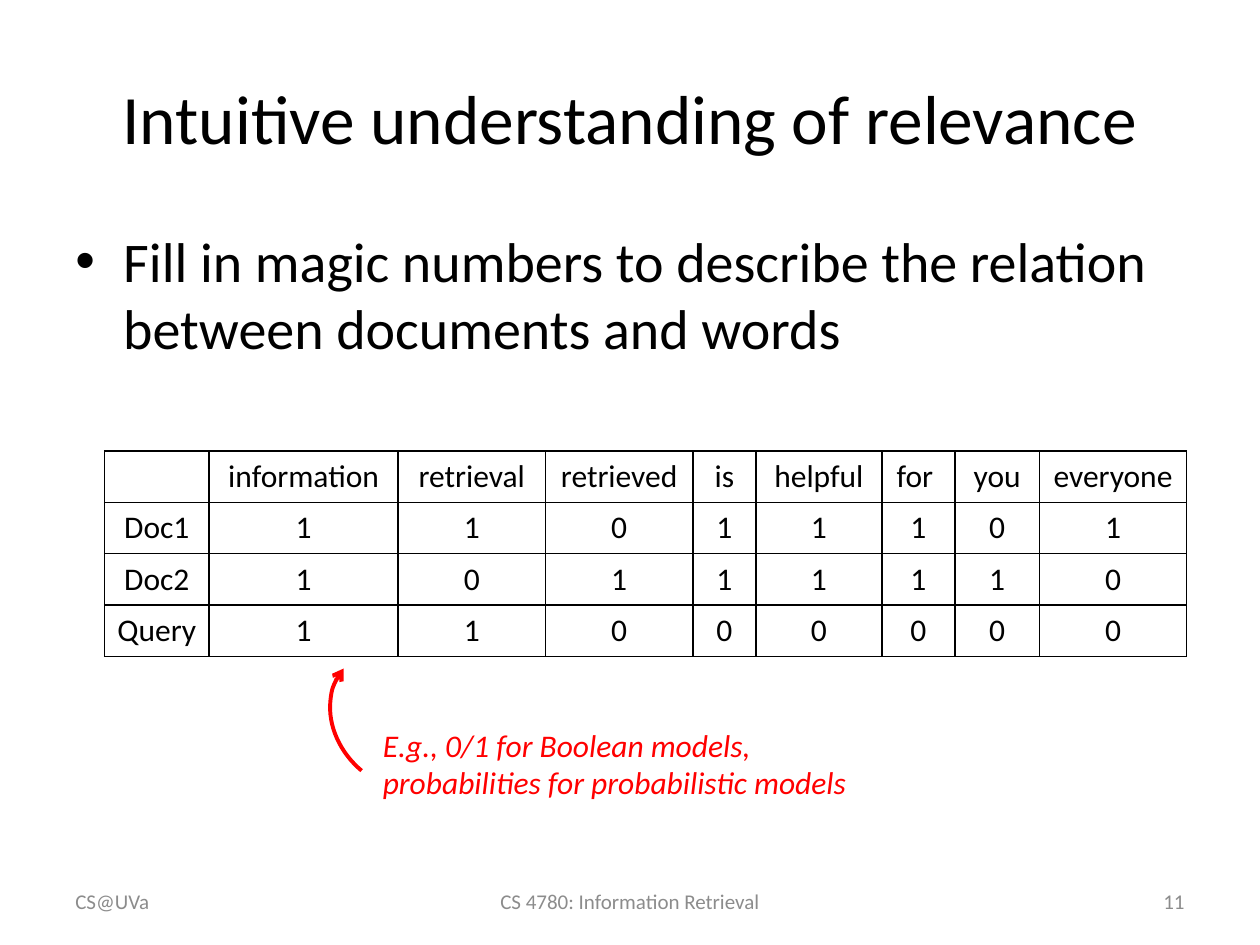
from dataclasses import dataclass

from lxml.etree import SubElement
from pptx import Presentation
from pptx.dml.color import RGBColor
from pptx.enum.shapes import MSO_SHAPE
from pptx.enum.text import MSO_ANCHOR, PP_ALIGN
from pptx.oxml.ns import qn
from pptx.util import Inches, Pt


@dataclass(frozen=True)
class Theme:
    font: str = "Calibri"
    ink: str = "000000"
    accent: str = "FF0000"
    muted: str = "8C8C8C"
    title: float = 39.6
    body: float = 32
    small: float = 18
    footer: float = 12
    border: float = 1
    arrow: float = 2.25


THEME = Theme()

WORDS = ["", "information", "retrieval", "retrieved", "is", "helpful",
         "for ", "you", "everyone"]
WEIGHTS = {
    "Doc1": [1, 1, 0, 1, 1, 1, 0, 1],
    "Doc2": [1, 0, 1, 1, 1, 1, 1, 0],
    "Query": [1, 1, 0, 0, 0, 0, 0, 0],
}
COLUMN_WIDTHS = [0.83, 1.5, 1.17, 1.17, 0.5, 1, 0.58, 0.67, 1.17]


def set_text(frame, text, size, color=THEME.ink, align=PP_ALIGN.LEFT,
             anchor=MSO_ANCHOR.TOP, italic=False):
    frame.text = text
    frame.word_wrap = True
    frame.vertical_anchor = anchor
    paragraph = frame.paragraphs[0]
    paragraph.alignment = align
    for run in paragraph.runs:
        run.font.name = THEME.font
        run.font.size = Pt(size)
        run.font.italic = italic
        run.font.color.rgb = RGBColor.from_string(color)


def add_title(slide, left, top, width, height):
    title = slide.shapes.title
    title.left, title.top = Inches(left), Inches(top)
    title.width, title.height = Inches(width), Inches(height)
    set_text(title.text_frame, "Intuitive understanding of relevance",
             THEME.title, align=PP_ALIGN.CENTER, anchor=MSO_ANCHOR.MIDDLE)


def add_bullet(slide, left, top, width, height):
    body = slide.shapes.add_textbox(Inches(left), Inches(top),
                                    Inches(width), Inches(height))
    set_text(body.text_frame, "Fill in magic numbers to describe the relation "
             "between documents and words", THEME.body)
    properties = body.text_frame.paragraphs[0]._p.get_or_add_pPr()
    indent = Inches(0.38)
    properties.set("marL", str(indent))
    properties.set("indent", str(-indent))
    SubElement(properties, qn("a:buFont"), typeface="Arial")
    SubElement(properties, qn("a:buChar"), char="•")


def outline_cell(cell):
    properties = cell._tc.get_or_add_tcPr()
    for position, side in enumerate(("a:lnL", "a:lnR", "a:lnT", "a:lnB")):
        border = SubElement(properties, qn(side), w=str(Pt(THEME.border)))
        fill = SubElement(border, qn("a:solidFill"))
        SubElement(fill, qn("a:srgbClr"), val=THEME.ink)
        properties.insert(position, border)


def add_weights_table(slide, left, top, width, height):
    rows = [WORDS] + [[name, *values] for name, values in WEIGHTS.items()]
    table = slide.shapes.add_table(len(rows), len(WORDS), Inches(left), Inches(top),
                                   Inches(width), Inches(height)).table
    table.first_row = table.horz_banding = False
    for column, share in zip(table.columns, COLUMN_WIDTHS):
        column.width = Inches(width * share / sum(COLUMN_WIDTHS))
    for r, values in enumerate(rows):
        for c, value in enumerate(values):
            cell = table.cell(r, c)
            cell.fill.background()
            set_text(cell.text_frame, str(value), THEME.small,
                     align=PP_ALIGN.CENTER)
            outline_cell(cell)


def add_annotation(slide, left, top, width, height):
    """Place the red note at the lower right of the box, the arrow at its left."""
    group = slide.shapes.add_group_shape()
    note_left, note_top = 0.36, 0.53
    note = group.shapes.add_textbox(
        Inches(left + note_left), Inches(top + note_top),
        Inches(width - note_left), Inches(height - note_top))
    set_text(note.text_frame, "E.g., 0/1 for Boolean models, "
             "probabilities for probabilistic models",
             THEME.small, THEME.accent, italic=True)

    arrow = group.shapes.add_shape(MSO_SHAPE.ARC, Inches(left), Inches(top),
                                   Inches(1.26), Inches(1.06))
    arrow.rotation = 220
    arrow.shadow.inherit = False
    arrow.fill.background()
    arrow.line.color.rgb = RGBColor.from_string(THEME.accent)
    arrow.line.width = Pt(THEME.arrow)
    SubElement(arrow.line._get_or_add_ln(), qn("a:tailEnd"), type="arrow")


def add_footer(slide, left, top, width, height):
    side, middle = 2.33, 3.17
    parts = [
        ("CS@UVa", left, side, PP_ALIGN.LEFT),
        ("CS 4780: Information Retrieval", left + (width - middle) / 2,
         middle, PP_ALIGN.CENTER),
        ("11", left + width - side, side, PP_ALIGN.RIGHT),
    ]
    for text, part_left, part_width, align in parts:
        part = slide.shapes.add_textbox(Inches(part_left), Inches(top),
                                        Inches(part_width), Inches(height))
        set_text(part.text_frame, text, THEME.footer, THEME.muted, align,
                 MSO_ANCHOR.MIDDLE)


def main():
    deck = Presentation()
    deck.slide_width, deck.slide_height = Inches(10), Inches(7.5)
    slide = deck.slides.add_slide(deck.slide_layouts[5])
    add_title(slide, 0.5, 0.3, 9, 1.25)
    add_bullet(slide, 0.5, 1.75, 9, 4.95)
    add_weights_table(slide, 0.83, 3.58, 8.59, 1.63)
    add_annotation(slide, 2.58, 5.18, 4.36, 1.24)
    add_footer(slide, 0.5, 6.95, 9, 0.4)
    deck.save("out.pptx")


if __name__ == "__main__":
    main()
